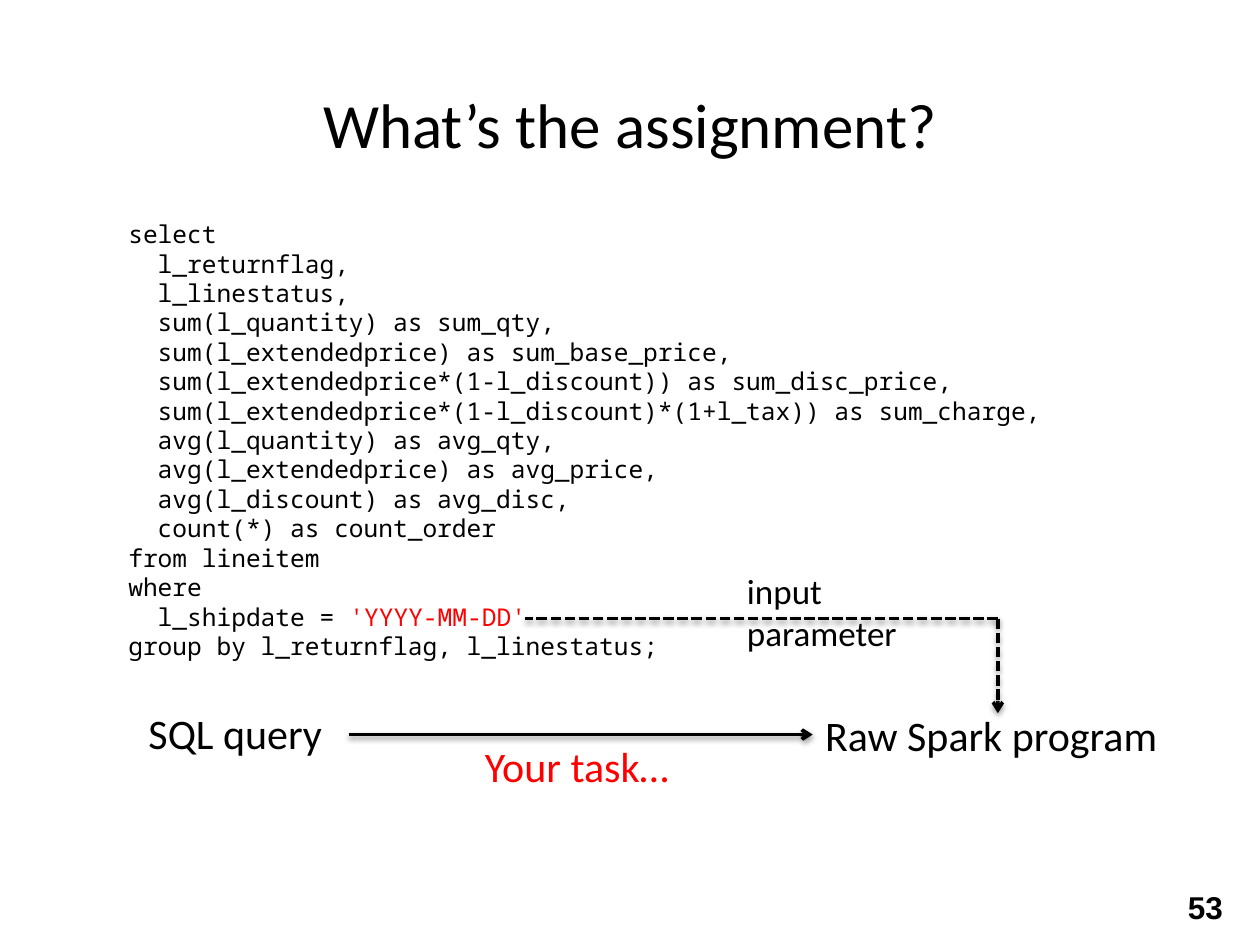
from lxml import etree
from pptx import Presentation
from pptx.dml.color import RGBColor
from pptx.enum import dml, shapes, text
from pptx.oxml import parse_xml
from pptx.oxml.ns import nsdecls, qn
from pptx.util import Inches, Pt

BLACK = RGBColor(0, 0, 0)
RED = RGBColor(0xFF, 0, 0)
DATE = "'YYYY-MM-DD'"
QUERY = f"""select
  l_returnflag,
  l_linestatus,
  sum(l_quantity) as sum_qty,
  sum(l_extendedprice) as sum_base_price,
  sum(l_extendedprice*(1-l_discount)) as sum_disc_price,
  sum(l_extendedprice*(1-l_discount)*(1+l_tax)) as sum_charge,
  avg(l_quantity) as avg_qty,
  avg(l_extendedprice) as avg_price,
  avg(l_discount) as avg_disc,
  count(*) as count_order
from lineitem
where
  l_shipdate = {DATE}
group by l_returnflag, l_linestatus;"""
SHADOW = f"""<a:effectLst {nsdecls('a')}>
  <a:outerShdw blurRad="40000" dist="20000" dir="5400000" rotWithShape="0">
    <a:srgbClr val="000000"><a:alpha val="38000"/></a:srgbClr>
  </a:outerShdw>
</a:effectLst>"""


def add_run(p, content, font="Calibri", size=24, color=BLACK, bold=False):
    r = p.add_run()
    r.text = content
    r.font.name = font
    r.font.size = Pt(size)
    r.font.color.rgb = color
    r.font.bold = bold


def add_text(s, content, box, wrap=False, align=text.PP_ALIGN.LEFT,
             anchor=text.MSO_ANCHOR.TOP, highlight=None, **fmt):
    tf = s.shapes.add_textbox(*map(Inches, box)).text_frame
    tf.word_wrap = wrap
    tf.vertical_anchor = anchor
    for i, line in enumerate(content.split("\n")):
        p = tf.add_paragraph() if i else tf.paragraphs[0]
        p.alignment = align
        if highlight and highlight in line:
            before, after = line.split(highlight)
            add_run(p, before, **fmt)
            add_run(p, highlight, **{**fmt, "color": RED})
            if after:
                add_run(p, after, **fmt)
        else:
            add_run(p, line, **fmt)


def add_line(s, start, end, dashed=False, arrow=False):
    points = map(Inches, (*start, *end))
    c = s.shapes.add_connector(shapes.MSO_CONNECTOR.STRAIGHT, *points)
    c.line.color.rgb = BLACK
    c.line.width = Pt(2)
    if dashed:
        c.line.dash_style = dml.MSO_LINE.SQUARE_DOT
    if arrow:
        ln = c.line._get_or_add_ln()
        etree.SubElement(ln, qn("a:tailEnd"), type="arrow")
    c._element.spPr.append(parse_xml(SHADOW))


def main():
    prs = Presentation()
    prs.slide_width, prs.slide_height = Inches(10), Inches(7.5)
    s = prs.slides.add_slide(prs.slide_layouts[6])

    add_text(s, "SQL query", (1.08, 5.57, 1.69, 0.5))
    add_text(s, QUERY, (0.92, 1.69, 7.51, 3.64), highlight=DATE,
             font="Noto Sans Mono", size=14)
    add_text(s, "Raw Spark program", (6.45, 5.58, 2.89, 0.5))

    corner = (7.92, 4.91)
    add_line(s, (2.77, 5.83), (6.45, 5.83), arrow=True)
    add_line(s, corner, (7.92, 5.66), dashed=True, arrow=True)
    add_line(s, corner, (4.17, 4.91), dashed=True)

    add_text(s, "input parameter", (5.83, 4.47, 2, 0.44), wrap=True, size=20)
    add_text(s, "Your task…", (3.75, 5.83, 1.82, 0.5), color=RED)
    add_text(s, "What’s the assignment?", (0, 0.6, 10, 0.75), wrap=True,
             align=text.PP_ALIGN.CENTER, anchor=text.MSO_ANCHOR.MIDDLE, size=36)
    add_text(s, "53", (9.33, 7, 0.58, 0.4), wrap=True,
             font="Arial", size=18, bold=True)
    prs.save("out.pptx")


if __name__ == "__main__":
    main()
